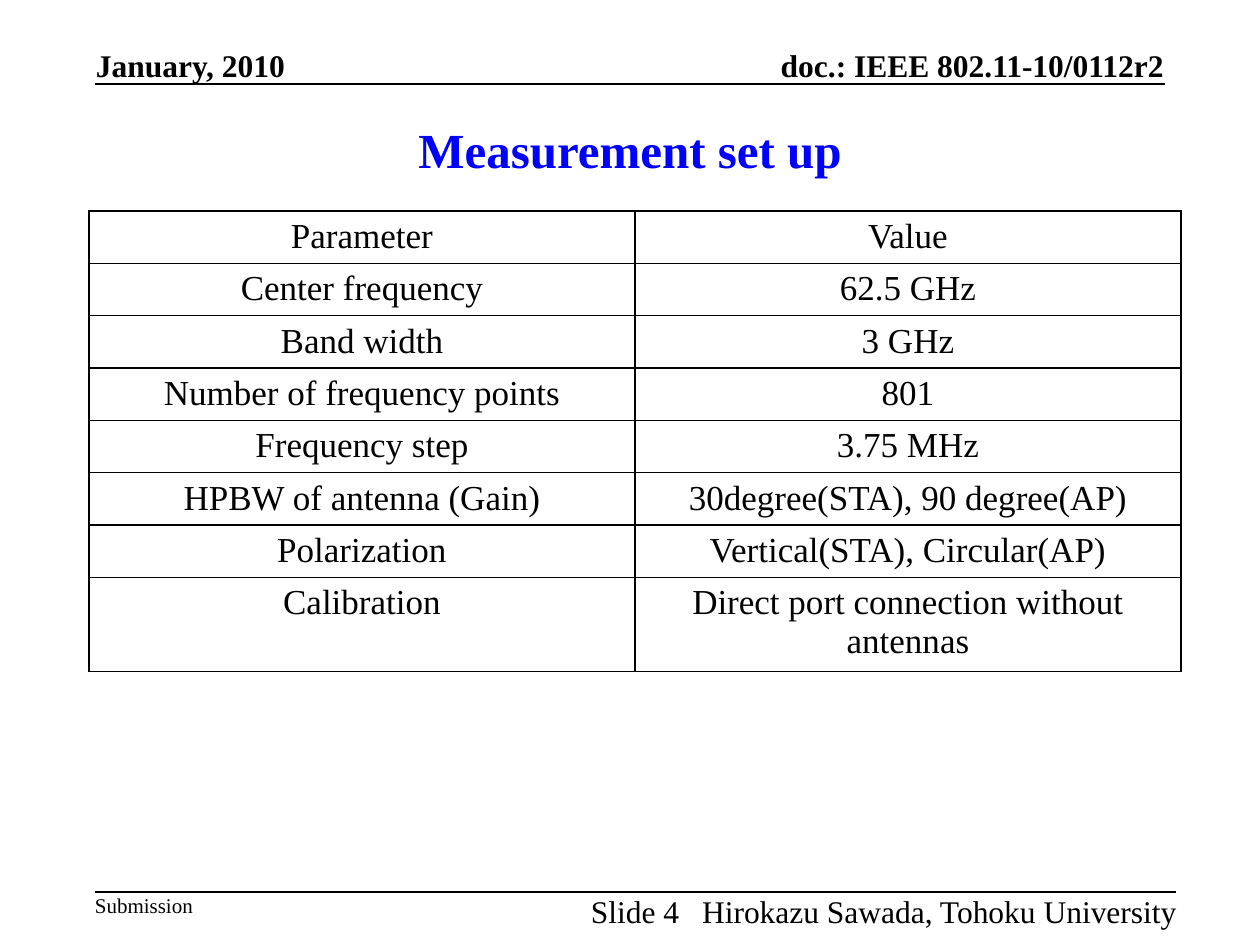
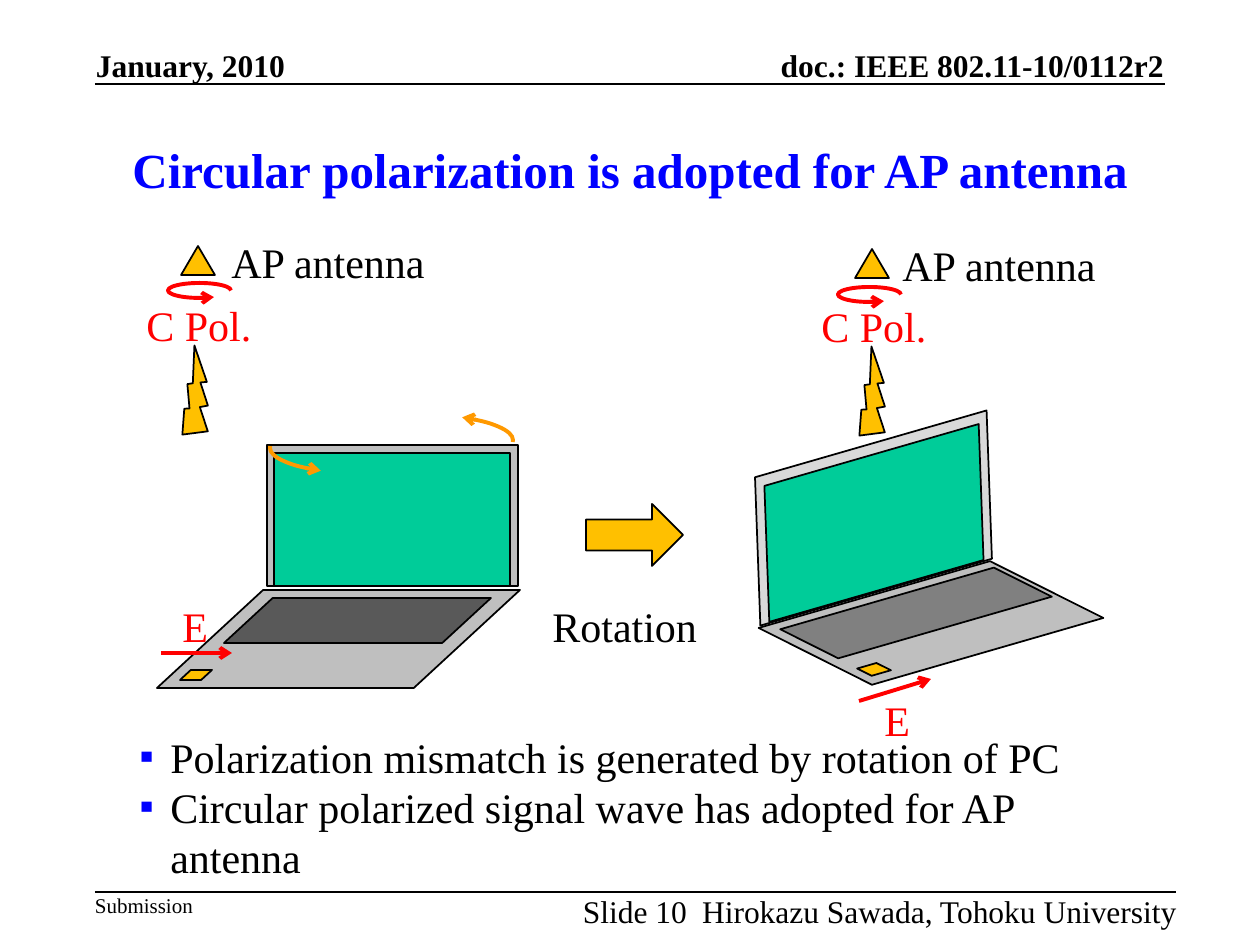
from pptx import Presentation
from pptx import util as u
from pptx.dml.color import RGBColor
from pptx.enum import shapes, text
from pptx.oxml import ns
from pptx.oxml.xmlchemy import OxmlElement

# Shared look
PX = 914400 / 126
FONT = "Times New Roman"
BLACK = RGBColor(0x00, 0x00, 0x00)
BLUE = RGBColor(0x00, 0x00, 0xFF)
RED = RGBColor(0xFF, 0x00, 0x00)
ORANGE = RGBColor(0xFF, 0x99, 0x00)
AMBER = RGBColor(0xFF, 0xC0, 0x00)
GREEN = RGBColor(0x00, 0xCC, 0x99)
SILVER = RGBColor(0xBF, 0xBF, 0xBF)
PALE = RGBColor(0xD9, 0xD9, 0xD9)
GREY = RGBColor(0x80, 0x80, 0x80)
CHARCOAL = RGBColor(0x59, 0x59, 0x59)
G = shapes.MSO_SHAPE
A = text.PP_ALIGN
TOP, MIDDLE, BOTTOM = (text.MSO_ANCHOR.TOP, text.MSO_ANCHOR.MIDDLE,
                       text.MSO_ANCHOR.BOTTOM)

# Header and footer: text, box, format
DATE = "January, 2010"
DOC = "doc.: IEEE 802.11-10/0112r2"
AUTHOR = "Hirokazu Sawada, Tohoku University"
BAND = [
    (DATE, (96, 46, 190, 38), dict(size=18, bold=True, anchor=BOTTOM)),
    (DOC, (713, 46, 451, 38),
     dict(size=18, bold=True, anchor=BOTTOM, align=A.RIGHT)),
    ("Submission", (95, 893, 98, 25), dict(size=12)),
    (AUTHOR, (697, 892, 480, 36), dict(size=18, align=A.RIGHT)),
]
RULES = [(95, 84, 1165, 84), (95, 892, 1176, 892)]

# Measurement slide
SETUP = [
    ("Parameter", "Value"),
    ("Center frequency", "62.5 GHz"),
    ("Band width", "3 GHz"),
    ("Number of frequency points", "801"),
    ("Frequency step", "3.75 MHz"),
    ("HPBW of antenna (Gain)", "30degree(STA), 90 degree(AP)"),
    ("Polarization", "Vertical(STA), Circular(AP)"),
    ("Calibration", "Direct port connection without antennas"),
]
TABLE_BOX = (89, 211, 1092, 450)
LAST_ROW = 90

# Polarization slide: kind, box, fill, then optional format
SLANT = dict(adj=[1.083])
TILT = dict(rot=343.9)
TILT_SLANT = dict(rot=343.9, adj=[1.083], flip="V")
UPRIGHT_PC = [
    (G.RECTANGLE, (267, 445, 251, 141), SILVER, {}),
    (G.RECTANGLE, (274, 453, 236, 133), GREEN, {}),
    (G.PARALLELOGRAM, (157, 590, 363, 98), SILVER, SLANT),
    (G.PARALLELOGRAM, (224, 598, 267, 45), CHARCOAL, SLANT),
    (G.PARALLELOGRAM, (180, 670, 32, 10), AMBER, SLANT),
]
ROTATED_PC = [
    (G.PARALLELOGRAM, (764, 580, 334, 86), SILVER, TILT_SLANT),
    (G.PARALLELOGRAM, (735, 446, 277, 144), PALE, TILT),
    (G.PARALLELOGRAM, (746, 457, 256, 132), GREEN, TILT),
    (G.PARALLELOGRAM, (781, 591, 270, 44), GREY, TILT_SLANT),
    (G.PARALLELOGRAM, (858, 664, 32, 11), AMBER, TILT_SLANT),
]
ROTATION_ARROW = (G.RIGHT_ARROW, (586, 504, 97, 62), AMBER, {})
TURN = [203.495, 0.609]
TURN_ARCS = [((292, 413, 221, 54), ""), ((270, 421, 221, 54), "HV")]
LOOP = [14.774, 0]

# Left and top of each antenna's parts
ANTENNAS = [
    dict(triangle=(181, 246), name=(219, 230), pol=(134, 293),
         bolt=(171, 353), loop=(168, 283)),
    dict(triangle=(855, 249), name=(890, 233), pol=(809, 294),
         bolt=(848, 354), loop=(838, 287)),
]
FIELDS = [((161, 653, 232, 653), (170, 594)),
          ((859, 701, 931, 679), (872, 688))]
POINTS = ["Polarization mismatch is generated by rotation of PC",
          "Circular polarized signal wave has adopted for AP antenna"]


def emu(box):
    return [round(v * PX) for v in box]


def element(parent, tag, **attrs):
    e = OxmlElement(tag)
    for key, value in attrs.items():
        e.set(key, str(value))
    parent.append(e)
    return e


def write(tf, words, size=24, color=BLACK, bold=False, align=A.LEFT,
          anchor=TOP, bullet=False):
    """Fill a text frame with one paragraph per line."""
    tf.vertical_anchor = anchor
    tf.text = words
    for p in tf.paragraphs:
        if bullet:
            pr = p._p.get_or_add_pPr()
            pr.set("marL", str(round(30 * PX)))
            pr.set("indent", str(round(-30 * PX)))
            element(element(pr, "a:buClr"), "a:srgbClr", val=BLUE)
            element(pr, "a:buSzPct", val=50000)
            element(pr, "a:buFont", typeface=FONT)
            element(pr, "a:buChar", char="■")
        p.alignment = align
        for r in p.runs:
            r.font.name, r.font.size, r.font.bold = FONT, u.Pt(size), bold
            r.font.color.rgb = color


def add_text(s, words, box, inset=True, wrap=False, **fmt):
    tf = s.shapes.add_textbox(*emu(box)).text_frame
    tf.word_wrap = wrap
    tf.auto_size = text.MSO_AUTO_SIZE.SHAPE_TO_FIT_TEXT
    if not inset:
        tf.margin_left = tf.margin_right = 0
        tf.margin_top = tf.margin_bottom = 0
    write(tf, words, **fmt)


def add_label(s, words, left_top, width, color=BLACK):
    add_text(s, words, (*left_top, width, 63), color=color)


def add_shape(s, kind, box, fill, fmt):
    sp = s.shapes.add_shape(kind, *emu(box))
    sp.shadow.inherit = False
    if fill is None:
        sp.fill.background()
    else:
        sp.fill.solid()
        sp.fill.fore_color.rgb = fill
    sp.line.color.rgb = BLACK
    sp.line.width = u.Pt(1)
    for i, value in enumerate(fmt.get("adj", [])):
        sp.adjustments[i] = value
    sp.rotation = fmt.get("rot", 0)
    for axis in fmt.get("flip", ""):
        sp._element.spPr.find(ns.qn("a:xfrm")).set("flip" + axis, "1")
    return sp


def arrow(line, color, end):
    line.color.rgb = color
    line.width = u.Pt(2.25)
    element(line._get_or_add_ln(), end, type="arrow")


def add_arc(s, box, color, adj, flip=""):
    sp = add_shape(s, G.ARC, box, None, dict(adj=adj, flip=flip))
    arrow(sp.line, color, "a:headEnd")


def add_line(s, ends):
    c = s.shapes.add_connector(shapes.MSO_CONNECTOR.STRAIGHT, *emu(ends))
    element(c._element.spPr, "a:effectLst")
    c.line.color.rgb = BLACK
    c.line.width = u.Pt(1)
    return c


def new_slide(prs, title, height, number):
    s = prs.slides.add_slide(prs.slide_layouts[5])
    sp = s.shapes.title
    sp.left, sp.top, sp.width, sp.height = emu((95, 95, 1070, height))
    write(sp.text_frame, title, size=28, color=BLUE, bold=True,
          align=A.CENTER, anchor=MIDDLE)
    for ends in RULES:
        add_line(s, ends)
    for words, box, fmt in BAND:
        add_text(s, words, box, inset=False, **fmt)
    add_text(s, f"Slide {number}", (575, 892, 120, 36), inset=False,
             size=18, align=A.CENTER)
    return s


def border(cell):
    pr = cell._tc.get_or_add_tcPr()
    for i, side in enumerate(("a:lnL", "a:lnR", "a:lnT", "a:lnB")):
        ln = OxmlElement(side)
        ln.set("w", str(u.Pt(1)))
        element(element(ln, "a:solidFill"), "a:srgbClr", val=BLACK)
        pr.insert(i, ln)


def setup_slide(prs):
    s = new_slide(prs, "Measurement set up", 108, 4)
    table = s.shapes.add_table(len(SETUP), 2, *emu(TABLE_BOX)).table
    single = (TABLE_BOX[3] - LAST_ROW) / (len(SETUP) - 1)
    heights = [single] * (len(SETUP) - 1) + [LAST_ROW]
    for row, words, height in zip(table.rows, SETUP, heights):
        row.height = round(height * PX)
        for cell, word in zip(row.cells, words):
            cell.fill.background()
            border(cell)
            cell.margin_bottom = round(4 * PX)
            write(cell.text_frame, word, size=20, align=A.CENTER)


def polarization_slide(prs):
    s = new_slide(prs, "Circular polarization is adopted for AP antenna",
                  147, 10)
    # Laptops and the turn between them
    for part in UPRIGHT_PC + ROTATED_PC + [ROTATION_ARROW]:
        add_shape(s, *part)
    for box, flip in TURN_ARCS:
        add_arc(s, box, ORANGE, TURN, flip)
    add_label(s, "Rotation", (540, 594), 171)
    # Field directions
    for ends, place in FIELDS:
        arrow(add_line(s, ends).line, RED, "a:tailEnd")
        add_label(s, "E", place, 52, RED)
    # Antennas
    for a in ANTENNAS:
        add_shape(s, G.ISOSCELES_TRIANGLE, (*a["triangle"], 34, 29), AMBER, {})
        add_label(s, "C Pol.", a["pol"], 131, RED)
        add_label(s, "AP antenna", a["name"], 220)
        add_shape(s, G.LIGHTNING_BOLT, (*a["bolt"], 53, 84), AMBER,
                  dict(rot=208.7))
        add_arc(s, (*a["loop"], 63, 15), RED, LOOP)
    add_text(s, "\n".join(POINTS), (128, 725, 1036, 166), wrap=True,
             bullet=True)


def main():
    prs = Presentation()
    prs.slide_width, prs.slide_height = u.Inches(10), u.Inches(7.5)
    setup_slide(prs)
    polarization_slide(prs)
    prs.save("out.pptx")


if __name__ == "__main__":
    main()
